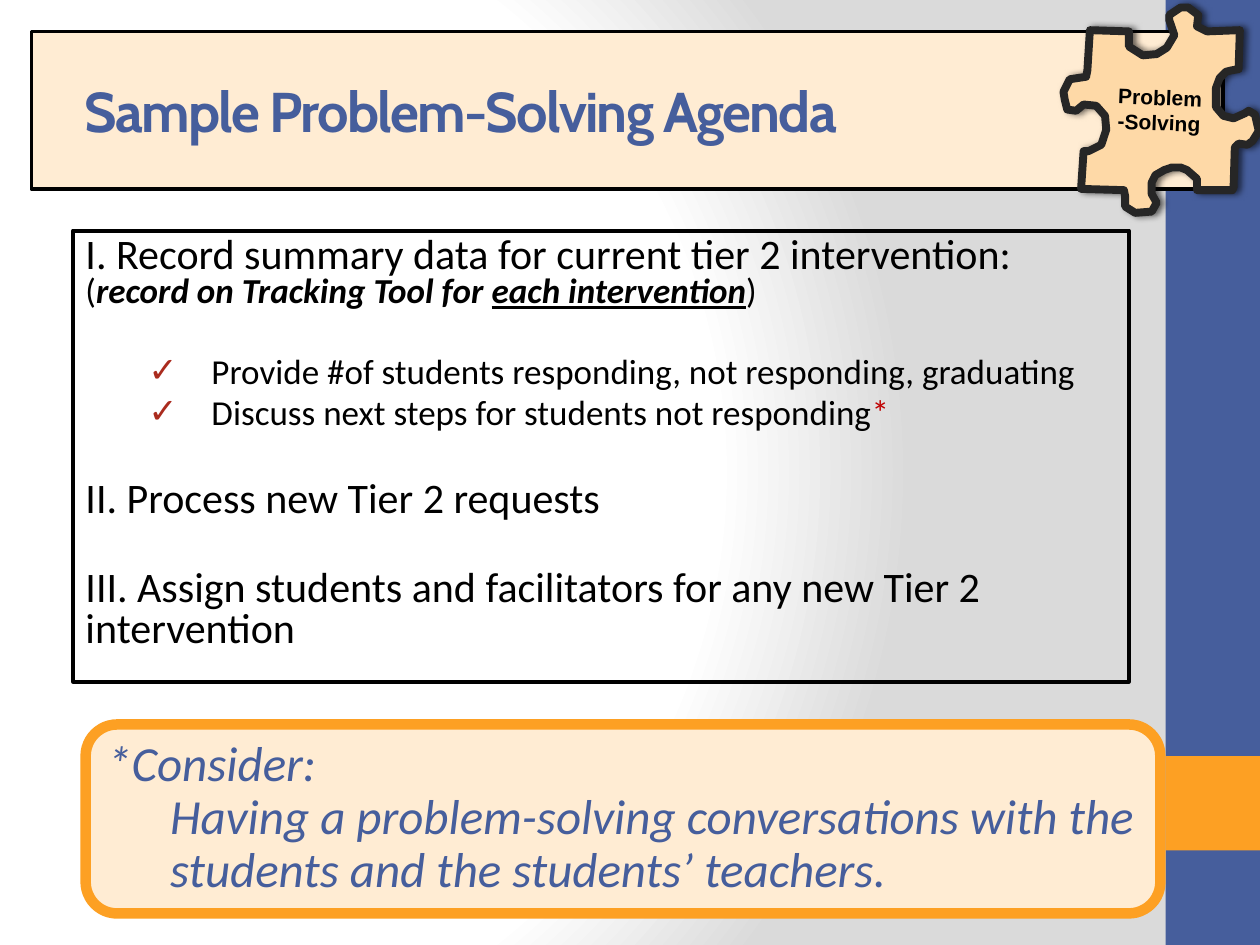
from lxml.etree import SubElement as Sub
from pptx import Presentation
from pptx.dml.color import RGBColor
from pptx.enum.shapes import MSO_SHAPE as Shape
from pptx.enum.text import MSO_ANCHOR as Anchor, PP_ALIGN as Align
from pptx.oxml import parse_xml
from pptx.oxml.ns import nsdecls, qn
from pptx.util import Inches, Pt

BLUE, GOLD, CREAM, BLACK = "465E9C", "FDA023", "FFECD3", "000000"
PIECE = [
    (984, 24), (983, 55), (977, 56), (973, 57), (968, 62), (965, 70),
    (965, 75), (965, 85), (971, 92), (979, 94), (988, 90), (991, 88),
    (996, 91), (999, 104), (994, 112), (990, 115), (983, 114), (980, 117),
    (979, 149), (978, 151), (950, 151), (950, 142), (942, 135), (937, 133),
    (930, 133), (924, 135), (917, 139), (914, 145), (914, 154), (918, 161),
    (914, 168), (901, 169), (893, 164), (893, 156), (892, 151), (858, 150),
    (860, 120), (864, 120), (874, 115), (878, 103), (877, 92), (870, 84),
    (860, 83), (854, 88), (847, 87), (845, 79), (844, 73), (849, 63),
    (862, 61), (863, 56), (865, 24), (896, 25), (896, 37), (907, 44),
    (918, 43), (926, 38), (932, 28), (928, 16), (928, 12), (937, 6),
    (943, 6), (951, 12), (950, 21), (958, 25),
]


def color(code):
    """Turn a hex string into a colour."""
    return RGBColor.from_string(code)


def paint(shape, fill=None, line=None, width=0):
    """Set the fill and the outline of a shape."""
    if fill:
        shape.fill.solid()
        shape.fill.fore_color.rgb = color(fill)
    else:
        shape.fill.background()
    if line:
        shape.line.color.rgb = color(line)
        shape.line.width = Pt(width)
    else:
        shape.line.fill.background()


def box(slide, kind, area, *look):
    """Add a painted preset shape without a shadow."""
    shape = slide.shapes.add_shape(kind, *map(Inches, area))
    shape.shadow.inherit = False
    paint(shape, *look)
    return shape


def style(para, size, name, code, bold=None, slant=None):
    """Set the font of a paragraph."""
    font = para.font
    font.size, font.name = Pt(size), name
    font.bold, font.italic = bold, slant
    font.color.rgb = color(code)


def add_para(frame, text, size, code=BLACK, gap=0, space=0.8, slant=None):
    """Add a left-aligned paragraph, using the empty first one if free."""
    first = frame.paragraphs[0]
    para = frame.add_paragraph() if first.runs else first
    para.add_run().text = text
    para.alignment = Align.LEFT
    para.line_spacing, para.space_before = space, Pt(gap)
    style(para, size, "Calibri", code, slant=slant)
    return para


def indent(para, left, hang=0):
    """Set the left margin and the first-line indent."""
    props = para._p.get_or_add_pPr()
    props.set("marL", str(Inches(left)))
    props.set("indent", str(Inches(hang)))
    return props


def check(para):
    """Give a paragraph a red check mark."""
    props = indent(para, 1, -0.5)
    last = props.find(qn("a:defRPr"))
    for body in ('<a:buClr {}><a:srgbClr val="AA2B1E"/></a:buClr>',
                 '<a:buFont {} typeface="Calibri"/>',
                 '<a:buChar {} char="✓"/>'):
        last.addprevious(parse_xml(body.format(nsdecls("a"))))


def add_back(slide):
    """Shade the background from white to grey."""
    stops = "".join(
        f'<a:gs pos="{pos}000"><a:srgbClr val="{code}"/></a:gs>'
        for pos, code in [(0, "FFFFFF"), (75, "FFFFFF"), (100, "DADADA")])
    slide._element.cSld.insert(0, parse_xml(
        f'<p:bg {nsdecls("p", "a")}><p:bgPr><a:gradFill rotWithShape="1">'
        f'<a:gsLst>{stops}</a:gsLst><a:path path="circle">'
        '<a:fillToRect l="20000" t="50000" r="100000" b="50000"/></a:path>'
        '</a:gradFill><a:effectLst/></p:bgPr></p:bg>'))


def add_agenda(slide):
    """Add the framed agenda."""
    area = 0.58, 1.83, 8.38, 3.58
    shape = box(slide, Shape.RECTANGLE, area, None, BLACK, 2.25)
    frame = shape.text_frame
    frame.word_wrap, frame.vertical_anchor = True, Anchor.TOP
    para = add_para(
        frame, "I. Record summary data for current tier 2 intervention:", 24, gap=4)
    para.add_line_break()
    for text, bold, line in [("(", False, False),
                             ("record on Tracking Tool for ", True, False),
                             ("each intervention", True, True),
                             (")", False, False)]:
        run = para.add_run()
        run.text, run.font.size = text, Pt(20)
        run.font.bold = run.font.italic = bold
        run.font.underline = line
    check(add_para(
        frame, "Provide #of students responding, not responding, graduating", 20, gap=27))
    para = add_para(
        frame, "Discuss next steps for students not responding", 20, gap=4)
    check(para)
    star = para.add_run()
    star.text, star.font.color.rgb = "*", color("C00000")
    for text in ["II. Process new Tier 2 requests",
                 "III. Assign students and facilitators for any new Tier 2 intervention"]:
        add_para(frame, text, 24, gap=28)


def add_note(slide):
    """Add the rounded note below the agenda."""
    area = 0.68, 5.75, 8.53, 1.5
    shape = box(slide, Shape.ROUNDED_RECTANGLE, area, CREAM, GOLD, 6)
    frame = shape.text_frame
    frame.word_wrap, frame.vertical_anchor = True, Anchor.MIDDLE
    add_para(frame, "*Consider:", 28, BLUE, space=0.9, slant=True)
    indent(add_para(
        frame, "Having a problem-solving conversations with the students "
        "and the students’ teachers.", 28, BLUE, space=0.9, slant=True), 0.5)


def add_title(slide):
    """Format the title and put it above the bands."""
    title = slide.shapes.title
    title.left, title.top, title.width, title.height = map(
        Inches, (0.25, 0.25, 9.46, 1.25))
    paint(title, CREAM, BLACK, 2.25)
    frame = title.text_frame
    frame.text = "Sample Problem-Solving Agenda"
    frame.vertical_anchor, frame.margin_left = Anchor.MIDDLE, Inches(0.42)
    para = frame.paragraphs[0]
    para.alignment = Align.LEFT
    style(para, 32, "Cabin", BLUE, bold=True)
    para.runs[0].font._element.set("spc", "-100")
    slide.shapes._spTree.append(title._element)


def add_piece(slide):
    """Add the labelled puzzle piece."""
    group = slide.shapes.add_group_shape()
    pen = group.shapes.build_freeform(*PIECE[0], scale=Inches(0.01))
    pen.add_line_segments(PIECE[1:])
    piece = pen.convert_to_shape()
    paint(piece, "FED9A7", "262626", 4.5)
    piece.shadow.inherit = False
    effect = piece._element.spPr.find(qn("a:effectLst"))
    shade = Sub(effect, qn("a:outerShdw"), blurRad=str(Pt(4)), dist=str(Pt(2)), dir="0")
    tint = Sub(shade, qn("a:srgbClr"), val=BLACK)
    Sub(tint, qn("a:alpha"), val="60000")
    label = group.shapes.add_textbox(*map(Inches, (8.76, 0.62, 0.89, 0.41)))
    label.rotation = 2.3
    frame = label.text_frame
    frame.word_wrap, frame.text = True, "Problem-Solving"
    para = frame.paragraphs[0]
    para.alignment = Align.CENTER
    style(para, 12, "Arial", BLACK, bold=True)


def main():
    """Build the slide and save it."""
    deck = Presentation()
    deck.slide_width, deck.slide_height = Inches(10), Inches(7.5)
    slide = deck.slides.add_slide(deck.slide_layouts[5])
    add_back(slide)
    box(slide, Shape.RECTANGLE, (9.25, 0, 0.75, 7.5), BLUE)
    box(slide, Shape.RECTANGLE, (9.25, 6, 0.75, 0.75), GOLD)
    add_agenda(slide)
    add_note(slide)
    add_title(slide)
    add_piece(slide)
    deck.save("out.pptx")


if __name__ == "__main__":
    main()
